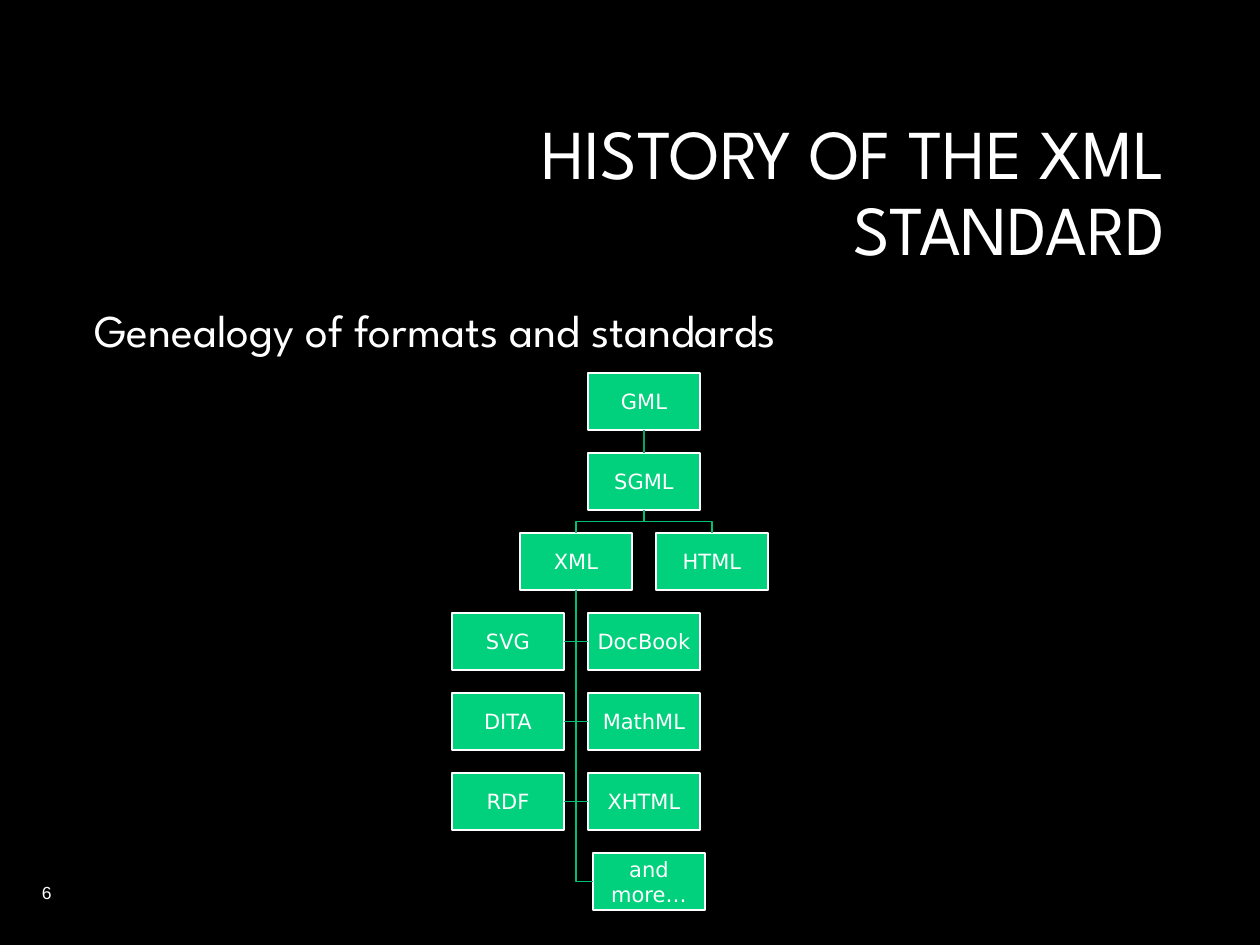
from lxml.etree import SubElement
from pptx import Presentation
from pptx.dml.color import RGBColor
from pptx.enum.shapes import MSO_CONNECTOR as Connector, MSO_SHAPE as Shape
from pptx.enum.text import MSO_ANCHOR as Anchor, MSO_AUTO_SIZE as AutoSize, PP_ALIGN as Align
from pptx.oxml.ns import qn
from pptx.util import Pt

PX = 914400 // 126
BOX_W, BOX_H = 112, 57
HALF_STEP, ROW_STEP = 68, 80
TREE_LEFT, TREE_TOP = 452, 373
WHITE, GREEN, BRANCH, TRUNK = "FFFFFF", "01D17D", "01BE71", "01A764"
SANS, DISPLAY = "DejaVu Sans", "League Spartan"

FORMATS = {
    "GML": (2, 0),
    "SGML": (2, 1),
    "XML": (1, 2),
    "HTML": (3, 2),
    "SVG": (0, 3),
    "DocBook": (2, 3),
    "DITA": (0, 4),
    "MathML": (2, 4),
    "RDF": (0, 5),
    "XHTML": (2, 5),
}


def colour(hex_code):
    """Turn a hex string into a colour."""
    return RGBColor.from_string(hex_code)


def place(item, left, top, width, height):
    """Position an item given in px."""
    item.left, item.top = left * PX, top * PX
    item.width, item.height = width * PX, height * PX


def write(item, words, size, font, align, anchor=Anchor.MIDDLE, spacing=1.0, inset=None):
    """Write one formatted paragraph into an item."""
    frame = item.text_frame
    frame.word_wrap = True
    frame.auto_size = AutoSize.NONE
    frame.vertical_anchor = anchor
    if inset is not None:
        frame.margin_left = frame.margin_right = inset * PX
        frame.margin_top = frame.margin_bottom = inset * PX
    paragraph = frame.paragraphs[0]
    paragraph.alignment = align
    paragraph.line_spacing = spacing
    run = paragraph.add_run()
    run.text = words
    run.font.size = Pt(size)
    run.font.name = font
    run.font.color.rgb = colour(WHITE)


def add_label(slide, bounds, words, size, font, align, **layout):
    """Add free-standing text."""
    label = slide.shapes.add_textbox(*(value * PX for value in bounds))
    write(label, words, size, font, align, **layout)


def add_format(slide, name, left, top):
    """Add the box of one format."""
    box = slide.shapes.add_shape(Shape.RECTANGLE, 0, 0, 0, 0)
    place(box, left, top, BOX_W, BOX_H)
    box.shadow.inherit = False
    box.fill.solid()
    box.fill.fore_color.rgb = colour(GREEN)
    box.line.color.rgb = colour(WHITE)
    box.line.width = Pt(1)
    write(box, name, 12, SANS, Align.CENTER, inset=1)
    return box


def add_branch(slide, *points):
    """Add a bent line through points in EMU."""
    outline = slide.shapes.build_freeform(*points[0], scale=1.0)
    outline.add_line_segments(points[1:], close=False)
    branch = outline.convert_to_shape()
    branch.shadow.inherit = False
    branch.fill.background()
    branch.line.color.rgb = colour(BRANCH)
    branch.line.width = Pt(1)


def add_trunk(slide, parent, child):
    """Join a parent to the child straight below it."""
    trunk = slide.shapes.add_connector(Connector.STRAIGHT, 0, 0, 0, 0)
    trunk.begin_connect(parent, 2)
    trunk.end_connect(child, 0)
    trunk.line.color.rgb = colour(TRUNK)
    trunk.line.width = Pt(1)
    SubElement(trunk.element.spPr, qn("a:effectLst"))


def add_fork(slide, parent, child):
    """Join a parent to a child on the next row, off to one side."""
    start = parent.left + parent.width // 2
    end = child.left + child.width // 2
    bottom = parent.top + parent.height
    middle = (bottom + child.top) // 2
    add_branch(slide, (start, bottom), (start, middle), (end, middle), (end, child.top))


def add_hanger(slide, parent, child):
    """Join a parent to the near side of a child hanging below it."""
    stem = parent.left + parent.width // 2
    side = child.left if child.left > stem else child.left + child.width
    level = child.top + child.height // 2
    add_branch(slide, (stem, parent.top + parent.height), (stem, level), (side, level))


def add_genealogy(slide):
    """Add the family tree of formats."""
    boxes = {
        name: add_format(slide, name, TREE_LEFT + column * HALF_STEP, TREE_TOP + row * ROW_STEP)
        for name, (column, row) in FORMATS.items()
    }
    boxes["and more…"] = add_format(slide, "and more…", 593, TREE_TOP + 6 * ROW_STEP)
    add_trunk(slide, boxes["GML"], boxes["SGML"])
    for name in ("XML", "HTML"):
        add_fork(slide, boxes["SGML"], boxes[name])
    for name in list(boxes)[4:]:
        add_hanger(slide, boxes["XML"], boxes[name])


def main():
    """Build and save the slide."""
    deck = Presentation()
    deck.slide_width, deck.slide_height = 1260 * PX, 945 * PX
    slide = deck.slides.add_slide(deck.slide_layouts[5])
    slide.background.fill.solid()
    slide.background.fill.fore_color.rgb = colour("000000")

    title = slide.shapes.title
    place(title, 300, 106, 878, 178)
    write(title, "HISTORY OF THE XML STANDARD", 40, DISPLAY, Align.RIGHT, spacing=0.9)
    add_label(slide, (82, 302, 1096, 561), "Genealogy of formats and standards",
              26, DISPLAY, Align.LEFT, anchor=Anchor.TOP, spacing=0.9)
    add_label(slide, (0, 868, 64, 50), "6", 10, "Arial", Align.RIGHT)
    add_genealogy(slide)
    deck.save("out.pptx")


if __name__ == "__main__":
    main()
